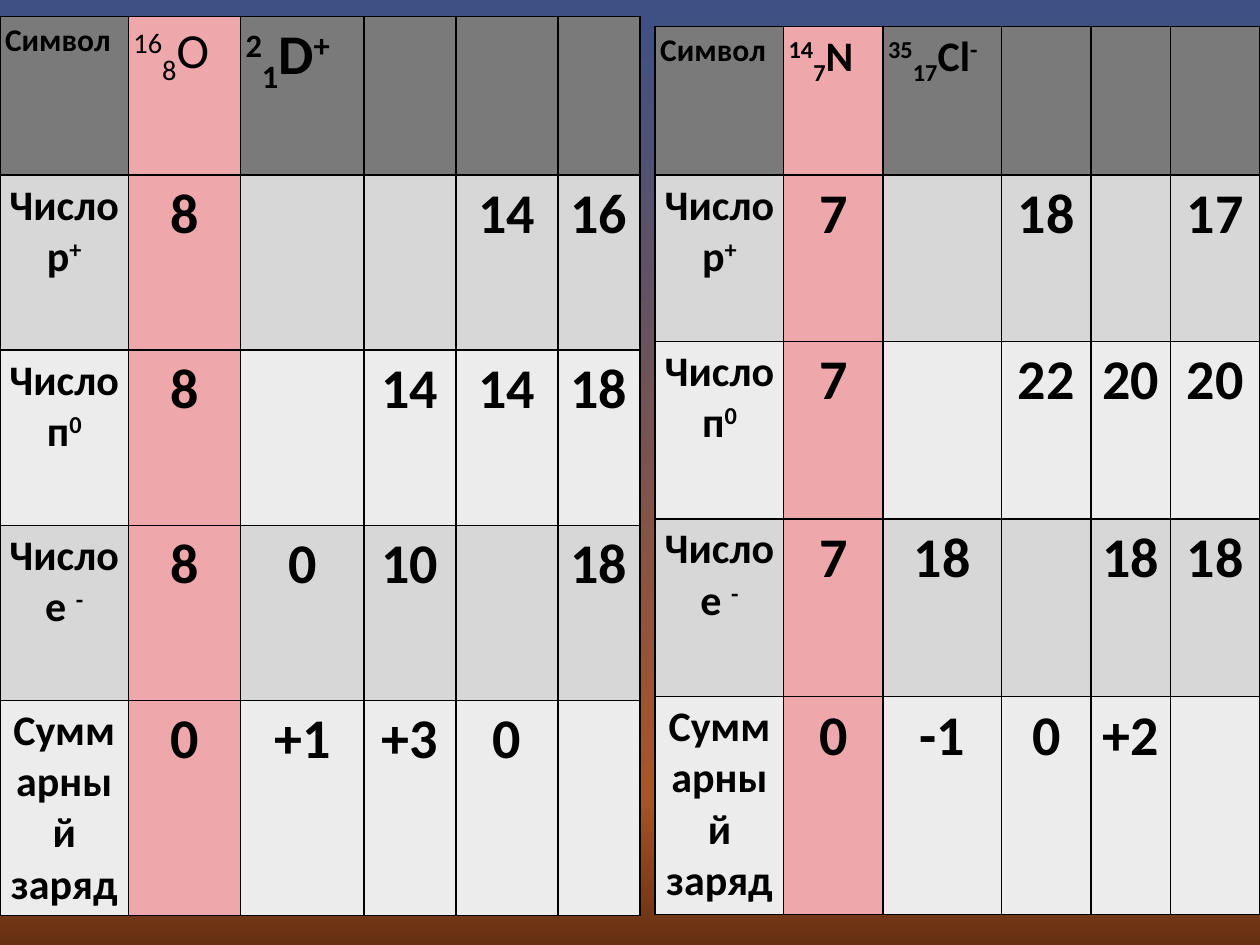
"""Builds a slide with two tables of protons, neutrons, electrons and charge."""
from copy import deepcopy

from lxml import etree
from pptx import Presentation
from pptx import util as u
from pptx.dml.color import RGBColor
from pptx.enum import text
from pptx.oxml.ns import qn

BLACK = RGBColor(0x00, 0x00, 0x00)
HEADER = RGBColor(0x7A, 0x7A, 0x7A)
DARK_BAND = RGBColor(0xD7, 0xD7, 0xD7)
LIGHT_BAND = RGBColor(0xEC, 0xEC, 0xEC)
EXAMPLE = RGBColor(0xEE, 0xA7, 0xAA)
BACKGROUND = [(0, RGBColor(0x3D, 0x51, 0x85)), (0.84, RGBColor(0xA6, 0x55, 0x28)),
              (1, RGBColor(0x66, 0x30, 0x12))]
FONT = "Calibri"
SUP, SUB = 30000, -25000
LABEL_SIZE, VALUE_SIZE = 24, 32

ROW_LABELS = [
    [[("Число", 0)], [("р", 0), ("+", SUP)]],
    [[("Число", 0)], [("п", 0), ("0", SUP)]],
    [[("Число", 0)], [("е ", 0), ("-", SUP)]],
    [[("Суммарный заряд", 0)]],
]

TABLES = [
    {
        "at": (5.2, 0.21),
        "cols": [1.02, 0.79, 0.94, 0.71, 0.63, 0.71],
        "rows": [1.18, 1.32, 1.41, 1.41, 1.73],
        "symbols": [
            ([("14", SUP), ("7", SUB), ("N", 0)], 24, True),
            ([("35", SUP), ("17", SUB), ("Cl", 0), ("-", SUP)], 24, True),
        ],
        "values": [
            ["7", "", "18", "", "17"],
            ["7", "", "22", "20", "20"],
            ["7", "18", "", "18", "18"],
            ["0", "-1", "0", "+2", ""],
        ],
    },
    {
        "at": (0, 0.13),
        "cols": [1.02, 0.89, 0.98, 0.73, 0.81, 0.65],
        "rows": [1.26, 1.39, 1.39, 1.39, 1.39],
        "symbols": [
            ([("16", SUP), ("8", SUB), ("O", 0)], 28, False),
            ([("2", SUP), ("1", SUB), ("D", 0), ("+", SUP)], 32, True),
        ],
        "values": [
            ["8", "", "", "14", "16"],
            ["8", "", "14", "14", "18"],
            ["8", "0", "10", "", "18"],
            ["0", "+1", "+3", "0", ""],
        ],
    },
]


def paint_background(s):
    fill = s.background.fill
    fill.gradient()
    fill.gradient_angle = 270
    stop_list = next(s._element.iter(qn("a:gsLst")))
    stop_list.append(deepcopy(stop_list[-1]))
    for stop, (position, color) in zip(fill.gradient_stops, BACKGROUND):
        stop.position = position
        stop.color.rgb = color


def add_border(cell):
    props = cell._tc.get_or_add_tcPr()
    for i, side in enumerate(("a:lnL", "a:lnR", "a:lnT", "a:lnB")):
        line = etree.Element(qn(side), w=str(u.Pt(1)))
        solid = etree.SubElement(line, qn("a:solidFill"))
        etree.SubElement(solid, qn("a:srgbClr"), val=str(BLACK))
        props.insert(i, line)


def write(cell, paragraphs, size, bold=True, align=text.PP_ALIGN.CENTER):
    tf = cell.text_frame
    for i, runs in enumerate(paragraphs):
        p = tf.add_paragraph() if i else tf.paragraphs[0]
        p.alignment = align
        for words, baseline in runs:
            r = p.add_run()
            r.text = words
            r.font.name, r.font.size, r.font.bold = FONT, u.Pt(size), bold
            r.font.color.rgb = BLACK
            if baseline:
                r.font._element.set("baseline", str(baseline))


def format_cell(cell, row, col):
    band = HEADER if row == 0 else DARK_BAND if row % 2 else LIGHT_BAND
    cell.fill.solid()
    cell.fill.fore_color.rgb = EXAMPLE if col == 1 else band
    cell.margin_left = cell.margin_right = u.Inches(0.04)
    cell.margin_top = cell.margin_bottom = u.Inches(0.04)
    add_border(cell)


def add_particle_table(s, spec_data):
    cols, rows = spec_data["cols"], spec_data["rows"]
    box = (*spec_data["at"], sum(cols), sum(rows))
    table = s.shapes.add_table(len(rows), len(cols), *map(u.Inches, box)).table
    table.first_row = table.horz_banding = False
    for column, width in zip(table.columns, cols):
        column.width = u.Inches(width)
    for table_row, height in zip(table.rows, rows):
        table_row.height = u.Inches(height)
    for row in range(len(rows)):
        for col in range(len(cols)):
            format_cell(table.cell(row, col), row, col)

    left = text.PP_ALIGN.LEFT
    write(table.cell(0, 0), [[("Символ", 0)]], 18, align=left)
    for col, (runs, size, bold) in enumerate(spec_data["symbols"], 1):
        write(table.cell(0, col), [runs], size, bold, left)
    for row, (label, values) in enumerate(zip(ROW_LABELS, spec_data["values"]), 1):
        write(table.cell(row, 0), label, LABEL_SIZE)
        for col, value in enumerate(values, 1):
            if value:
                write(table.cell(row, col), [[(value, 0)]], VALUE_SIZE)


def main():
    prs = Presentation()
    prs.slide_width, prs.slide_height = u.Inches(10), u.Inches(7.5)
    s = prs.slides.add_slide(prs.slide_layouts[6])
    paint_background(s)
    for table_data in TABLES:
        add_particle_table(s, table_data)
    prs.save("out.pptx")


if __name__ == "__main__":
    main()
